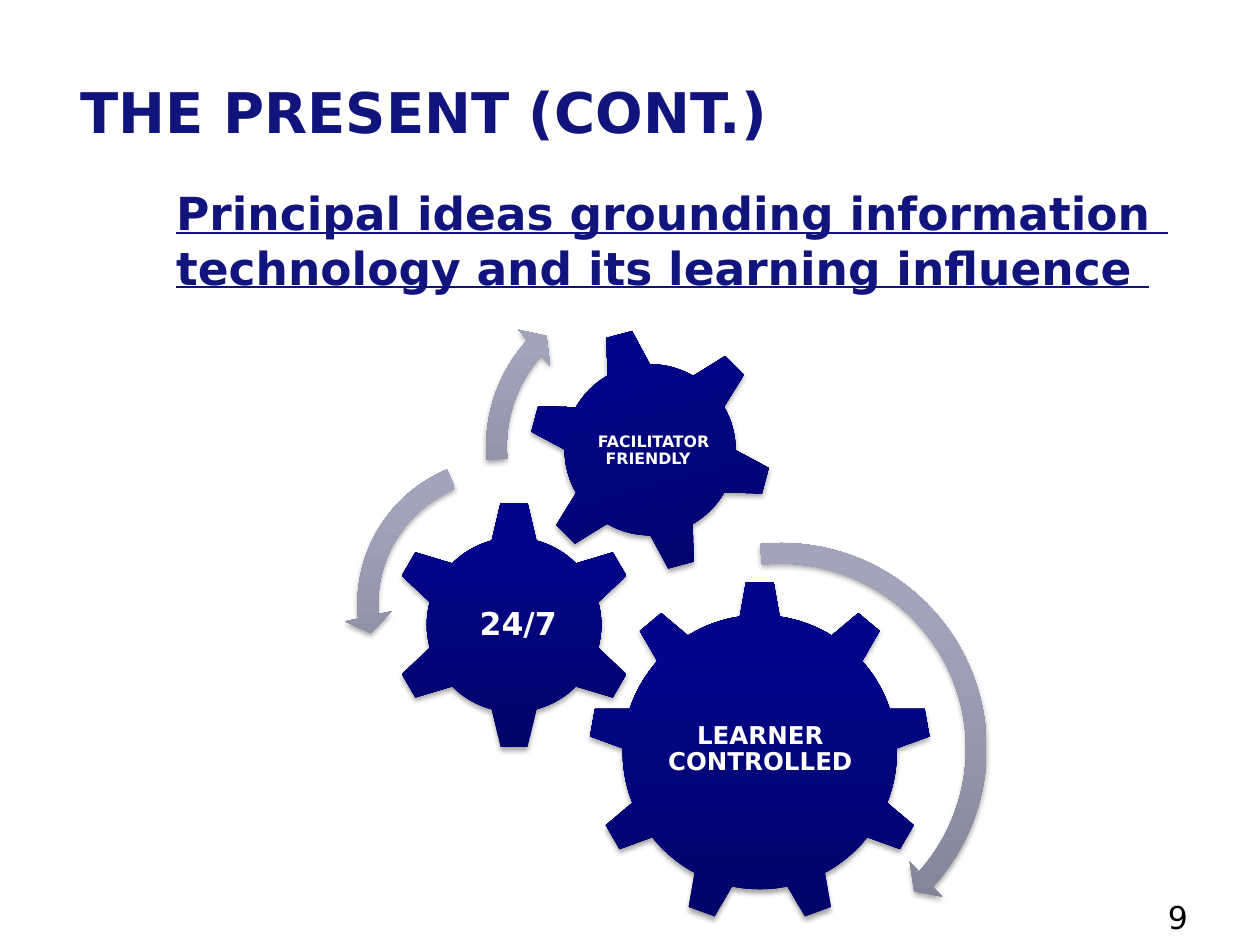
from dataclasses import dataclass

from lxml.etree import SubElement
from pptx import Presentation
from pptx.dml.color import RGBColor
from pptx.enum.shapes import MSO_SHAPE as Shape
from pptx.enum.text import MSO_ANCHOR as Anchor, MSO_AUTO_SIZE as AutoSize, PP_ALIGN as Align
from pptx.oxml.ns import qn
from pptx.util import Inches, Pt


@dataclass(frozen=True)
class Theme:
    font: str = "DejaVu Sans"
    navy: str = "11147D"
    white: str = "FFFFFF"
    black: str = "000000"
    gear_stops: tuple = ((0, "010469"), (80, "010589"), (100, "00048A"))
    arrow_stops: tuple = ((0, "7E7E91"), (80, "A3A3BC"), (100, "A3A4BE"))
    title: int = 32
    subtitle: int = 26
    number: int = 18


theme = Theme()
deck = Presentation()
deck.slide_width, deck.slide_height = Inches(10), Inches(7.5)
page = deck.slides.add_slide(deck.slide_layouts[6])
cell = deck.slide_width / 100


def add_words(parent, place, lines, size, color, bold=True, underline=None):
    box = parent.add_textbox(*(round(cell * n) for n in place))
    frame = box.text_frame
    frame.word_wrap = True
    frame.text = "\n".join(lines)
    for para in frame.paragraphs:
        font = para.font
        font.name, font.size, font.bold, font.underline = theme.font, Pt(size), bold, underline
        font.color.rgb = RGBColor.from_string(color)
    return frame


def add_part(parent, kind, place, stops):
    part = parent.add_shape(kind, *(round(cell * n) for n in place))
    part.line.fill.background()
    part.fill.gradient()
    gradient = part.fill._xPr.find(qn("a:gradFill"))
    gradient.find(qn("a:lin")).set("ang", str(270 * 60000))
    stop_list = gradient.find(qn("a:gsLst"))
    for old in list(stop_list):
        stop_list.remove(old)
    for share, color in stops:
        stop = SubElement(stop_list, qn("a:gs"), pos=str(share * 1000))
        SubElement(stop, qn("a:srgbClr"), val=color)
    part.shadow.inherit = False
    effects = part._element.spPr.find(qn("a:effectLst"))
    shadow = SubElement(effects, qn("a:outerShdw"), blurRad=str(Pt(3.1)), dist=str(Pt(1.8)),
                        dir=str(90 * 60000), rotWithShape="0")
    tint = SubElement(shadow, qn("a:srgbClr"), val=theme.black)
    SubElement(tint, qn("a:alpha"), val="35000")
    return part


title = add_words(page.shapes, (3.3, 4.2, 95, 9.2), ["THE PRESENT (CONT.)"], theme.title, theme.navy)
title.vertical_anchor = Anchor.MIDDLE
title.margin_left = Inches(0.31)

gears = [
    (Shape.GEAR_9, (46.7, 46.1, 27.2), 0, "LEARNER CONTROLLED", (52.2, 52.5, 16.3, 14), 14, 0.02),
    (Shape.GEAR_6, (30.9, 39.7, 19.8), 0, " 24/7", (35.8, 44.7, 9.8, 9.8), 18, 0.02),
    (Shape.GEAR_6, (41.9, 26, 19.4), 345, " FACILITATOR FRIENDLY ", (46.2, 30.3, 10.9, 10.9), 9, 0.01),
]
diagram = page.shapes.add_group_shape().shapes
for kind, (left, top, side), turn, label, label_place, size, inset in gears:
    gear = add_part(diagram, kind, (left, top, side, side), theme.gear_stops)
    gear.rotation = turn
    frame = add_words(diagram, label_place, [label], size, theme.white)
    frame.vertical_anchor = Anchor.MIDDLE
    frame.margin_left = frame.margin_right = frame.margin_top = frame.margin_bottom = Inches(inset)
    para = frame.paragraphs[0]
    para.alignment = Align.CENTER
    para.line_spacing = 0.9

arrows = [
    (Shape.CIRCULAR_ARROW, (44.6, 42, 34.8), (4.7, 5.5), (4.98, 42.06, 264.09)),
    (Shape.LEFT_CIRCULAR_ARROW, (27.3, 35.3, 25.3), (6.5, 7.5), (7.17, 174.82, 247.3)),
    (Shape.CIRCULAR_ARROW, (37.5, 21.8, 27.3), (6, 7), (6.57, 221.9, 175.14)),
]
for kind, (left, top, side), (band, head), degrees in arrows:
    arrow = add_part(diagram, kind, (left, top, side, side), theme.arrow_stops)
    values = [band / 100, *(angle * 0.6 for angle in degrees), head / 100]
    for index, value in enumerate(values):
        arrow.adjustments[index] = value

add_words(page.shapes, (91.7, 70.8, 8.3, 2.7), ["9"], theme.number, theme.black, bold=False)
subtitle = add_words(
    page.shapes, (13, 14.2, 80.7, 9.8),
    ["Principal ideas grounding information ", "technology and its learning influence "],
    theme.subtitle, theme.navy, underline=True)
subtitle.word_wrap = False
subtitle.auto_size = AutoSize.SHAPE_TO_FIT_TEXT

deck.save("out.pptx")
